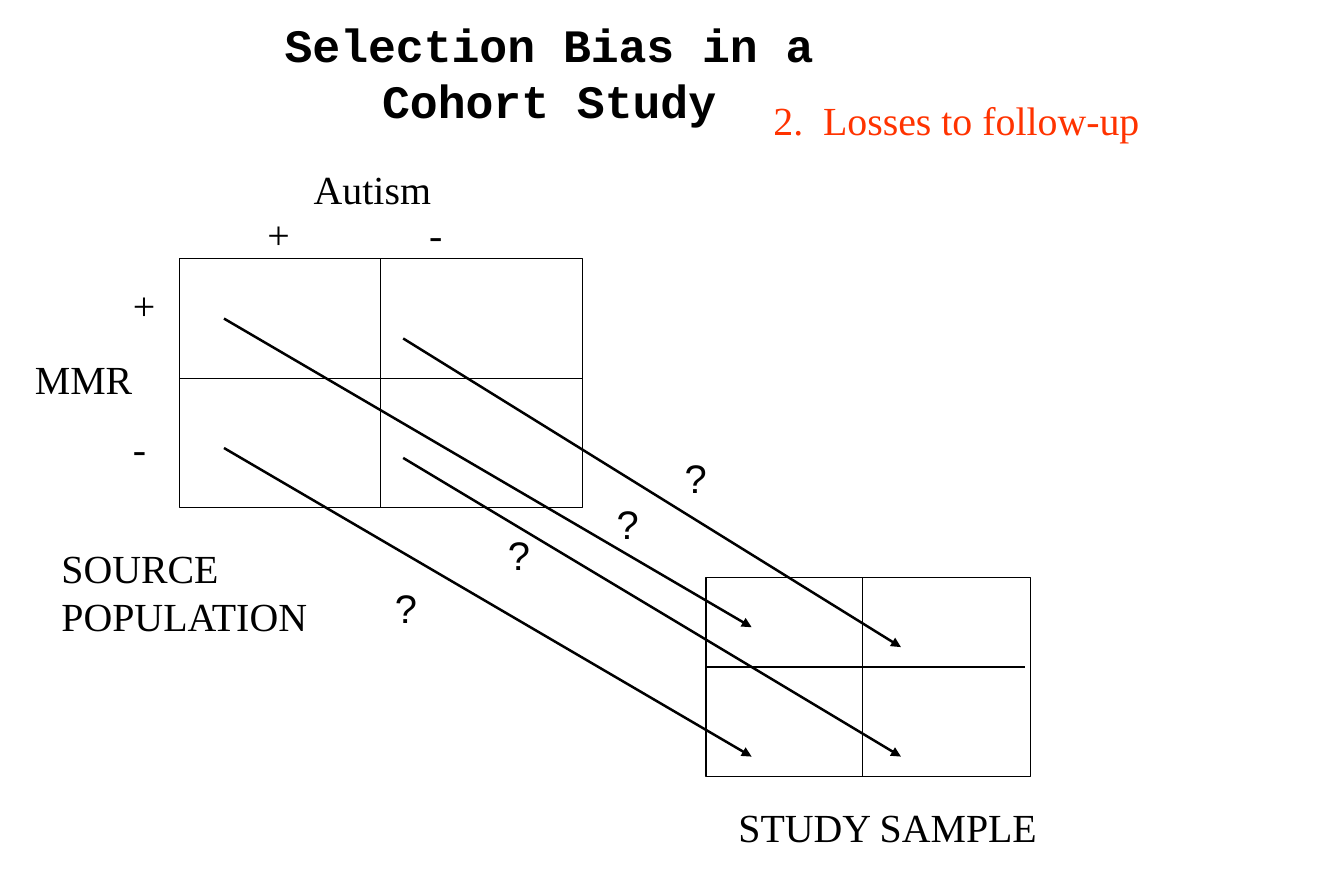
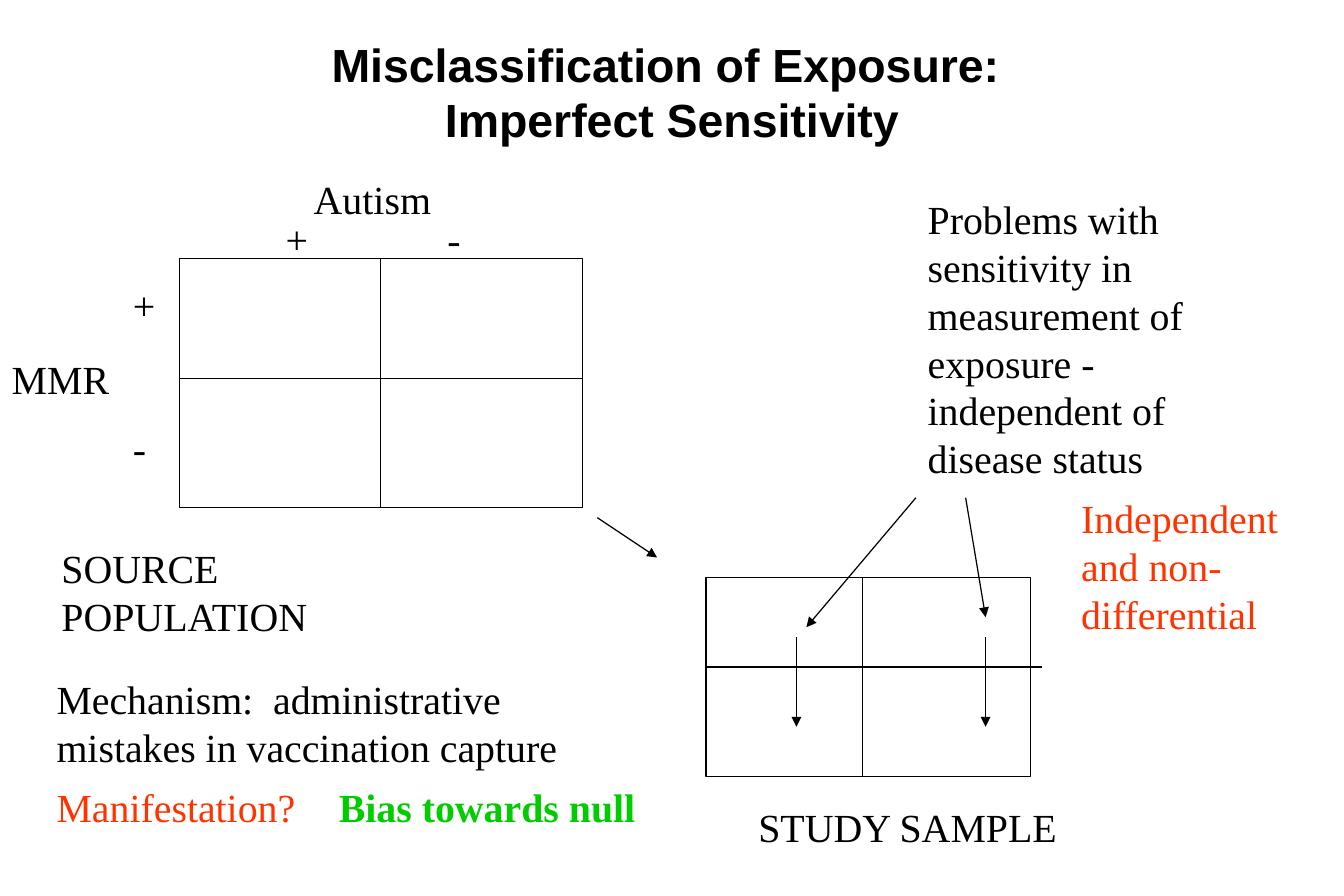
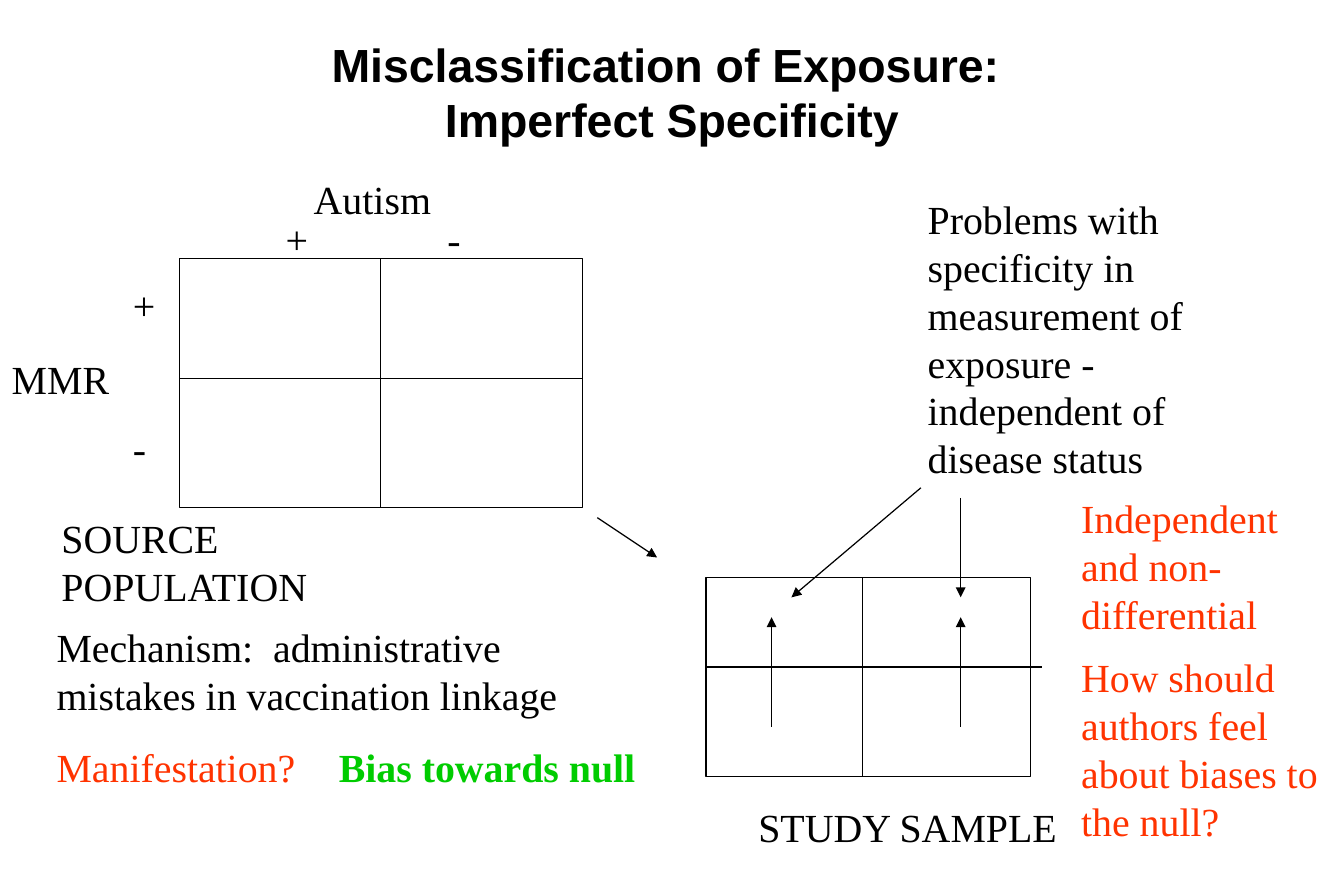
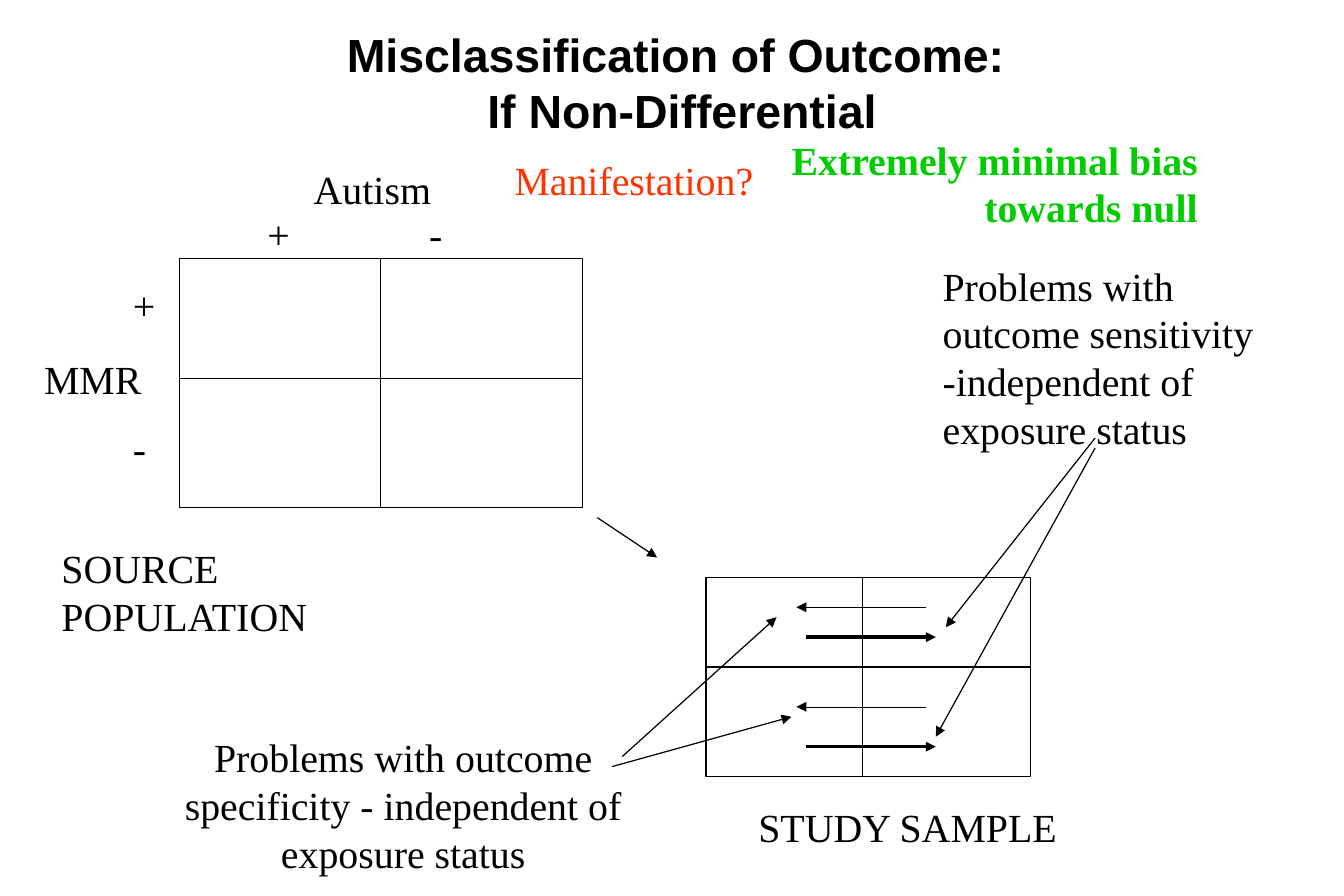
"""Build four slides on selection bias and misclassification in a cohort study."""
from dataclasses import dataclass

from lxml import etree
from pptx import Presentation
from pptx.dml.color import RGBColor
from pptx.enum import shapes, text
from pptx.oxml import ns
from pptx.util import Pt


@dataclass(frozen=True)
class Theme:
    black: RGBColor = RGBColor(0x00, 0x00, 0x00)
    red: RGBColor = RGBColor(0xFF, 0x33, 0x00)
    green: RGBColor = RGBColor(0x00, 0xCC, 0x00)
    serif: str = "Times New Roman"
    sans: str = "Arial"
    mono: str = "Courier New"
    title_size: int = 28
    body_size: int = 24
    leading: float = 1.2
    thin: float = 0.75


theme = Theme()
LEFT, CENTER, RIGHT = text.PP_ALIGN.LEFT, text.PP_ALIGN.CENTER, text.PP_ALIGN.RIGHT


def write(shape, words, font=theme.serif, size=theme.body_size, ink=theme.black,
          bold=False, align=LEFT, gap=0):
    frame = shape.text_frame
    frame.text = words
    frame.word_wrap = True
    frame.auto_size = text.MSO_AUTO_SIZE.NONE
    frame.vertical_anchor = text.MSO_ANCHOR.TOP
    for number, paragraph in enumerate(frame.paragraphs):
        paragraph.alignment = align
        paragraph.line_spacing = Pt(size * theme.leading)
        paragraph.space_before = Pt(gap if number else 0)
        for run in paragraph.runs:
            run.font.name = font
            run.font.size = Pt(size)
            run.font.bold = bold
            run.font.color.rgb = ink


def draw_line(slide, start_x, start_y, end_x, end_y, weight=theme.thin, arrow=True):
    line = slide.shapes.add_connector(
        shapes.MSO_CONNECTOR.STRAIGHT, Pt(start_x), Pt(start_y), Pt(end_x), Pt(end_y))
    line.line.color.rgb = theme.black
    line.line.width = Pt(weight)
    if arrow:
        etree.SubElement(line.line._ln, ns.qn("a:tailEnd"), type="triangle")
    etree.SubElement(line._element.spPr, ns.qn("a:effectLst"))


red = {"ink": theme.red}
green = {"ink": theme.green, "bold": True, "align": RIGHT}
sans = {"font": theme.sans}
transfer = (360, 312, 396, 336)
nondifferential = ("Independent and non-differential", 644.5, 294, 163, 3, red)

topics = [
    {
        "title": "Selection Bias in a Cohort Study",
        "title_at": (131, 6, 400), "title_font": theme.mono,
        "disease_y": 96, "signs": (154, 123), "exposure_x": 14,
        "source_y": 324, "sample_x": 438, "sample_edge": 618,
        "arrows": [(135, 192, 453, 378, 1.5), (135, 270, 453, 456, 1.5),
                   (243, 204, 543, 390, 1.5), (243, 276, 543, 456, 1.5)],
        "notes": [("2.  Losses to follow-up", 459, 54, 300, 1, red)]
        + [("?", x, y, 28, 1, sans)
           for x, y in ((231, 348), (299, 316), (364.5, 297.5), (405.5, 270))],
    },
    {
        "title": "Misclassification of Exposure:\n Imperfect Sensitivity",
        "title_at": (171, 18, 460), "title_font": theme.sans,
        "disease_y": 102, "signs": (165, 126), "exposure_x": 0,
        "source_y": 324, "sample_x": 450, "sample_edge": 628,
        "arrows": [transfer, (552, 300, 486, 378), (582, 300, 594, 372),
                   (480, 384, 480, 438), (594, 384, 594, 438)],
        "notes": [
            ("Problems with sensitivity in measurement of exposure - "
             "independent of disease status", 552, 114, 204, 6, {}),
            ("Mechanism:  administrative mistakes in vaccination capture",
             27, 403, 324, 2, {}),
            ("Manifestation?", 27, 468, 170, 1, red),
            ("Bias towards null", 189, 468, 201, 1, green),
            nondifferential],
    },
    {
        "title": "Misclassification of Exposure:\n Imperfect Specificity",
        "title_at": (171, 18, 460), "title_font": theme.sans,
        "disease_y": 102, "signs": (165, 126), "exposure_x": 0,
        "source_y": 306, "sample_x": 450, "sample_edge": 628,
        "arrows": [transfer, (555, 294, 477, 360), (579, 300, 579, 360),
                   (465, 438, 465, 372), (579, 438, 579, 372)],
        "notes": [
            ("Problems with specificity in measurement of exposure - "
             "independent of disease status", 552, 114, 204, 6, {}),
            ("Mechanism:  administrative mistakes in vaccination linkage",
             27, 372, 324, 2, {}),
            ("Manifestation?", 27, 444, 170, 1, red),
            ("Bias towards null", 189, 444, 201, 1, green),
            nondifferential,
            ("How should authors feel about biases to the null?",
             644.5, 390, 163, 4, red)],
    },
    {
        "title": "Misclassification of Outcome: \nIf Non-Differential",
        "title_at": (181, 12, 460), "title_font": theme.sans,
        "disease_y": 96, "signs": (154, 123), "exposure_x": 19.5,
        "source_y": 324, "sample_x": 450, "sample_edge": 621,
        "arrows": [transfer, (375, 456, 468, 372), (369, 462, 477, 432),
                   (660, 264, 570, 378), (660, 270, 564, 444),
                   (558, 366, 480, 366, 0.25), (558, 426, 480, 426, 0.25),
                   (486, 384, 564, 384, 2), (486, 450, 564, 450, 2)],
        "notes": [
            ("Manifestation?", 303, 90, 170, 1, red),
            ("Extremely minimal bias towards null", 435, 78, 294, 2, green),
            ("Problems with outcome sensitivity -independent of exposure status",
             561, 154, 204, 4, {}),
            ("Problems with outcome specificity - independent of exposure status",
             78, 438, 330, 3, {"align": CENTER})],
    },
]

deck = Presentation()
deck.slide_width, deck.slide_height = Pt(810), Pt(540)

for topic in topics:
    slide = deck.slides.add_slide(deck.slide_layouts[5])
    heading = slide.shapes.title
    left, top, width = topic["title_at"]
    heading.left, heading.top, heading.width, heading.height = (
        Pt(left), Pt(top), Pt(width), Pt(74))
    write(heading, topic["title"], topic["title_font"], theme.title_size,
          bold=True, align=CENTER)

    for left, top, width, height, split_x, split_y, edge in (
            (108, 156, 243, 150, 229.5, 228, 351),
            (425.5, 348, 195.5, 120, 520, 402, topic["sample_edge"])):
        population = slide.shapes.add_shape(
            shapes.MSO_SHAPE.RECTANGLE, Pt(left), Pt(top), Pt(width), Pt(height))
        population.shadow.inherit = False
        population.fill.background()
        population.line.color.rgb = theme.black
        population.line.width = Pt(theme.thin)
        draw_line(slide, split_x, top, split_x, top + height, arrow=False)
        draw_line(slide, left, split_y, edge, split_y, arrow=False)

    for arrow in topic["arrows"]:
        draw_line(slide, *arrow)

    signs_x, signs_y = topic["signs"]
    labels = [
        ("Autism", 182, topic["disease_y"], 100, 1, {}),
        ("+", signs_x, signs_y, 32, 1, {}),
        ("-", signs_x + 97.5, signs_y, 32, 1, {}),
        ("MMR", topic["exposure_x"], 210, 80, 1, {}),
        ("+\n-", 73, 165.5, 32, 4, {"gap": 2 * theme.body_size * theme.leading}),
        ("SOURCE POPULATION", 30, topic["source_y"], 180, 2, {}),
        ("STUDY SAMPLE", topic["sample_x"], 480, 210, 1, {}),
    ]
    for words, left, top, width, lines, style in labels + topic["notes"]:
        height = 7.2 + lines * theme.body_size * theme.leading
        label = slide.shapes.add_textbox(Pt(left), Pt(top), Pt(width), Pt(height))
        write(label, words, **style)

deck.save("out.pptx")
